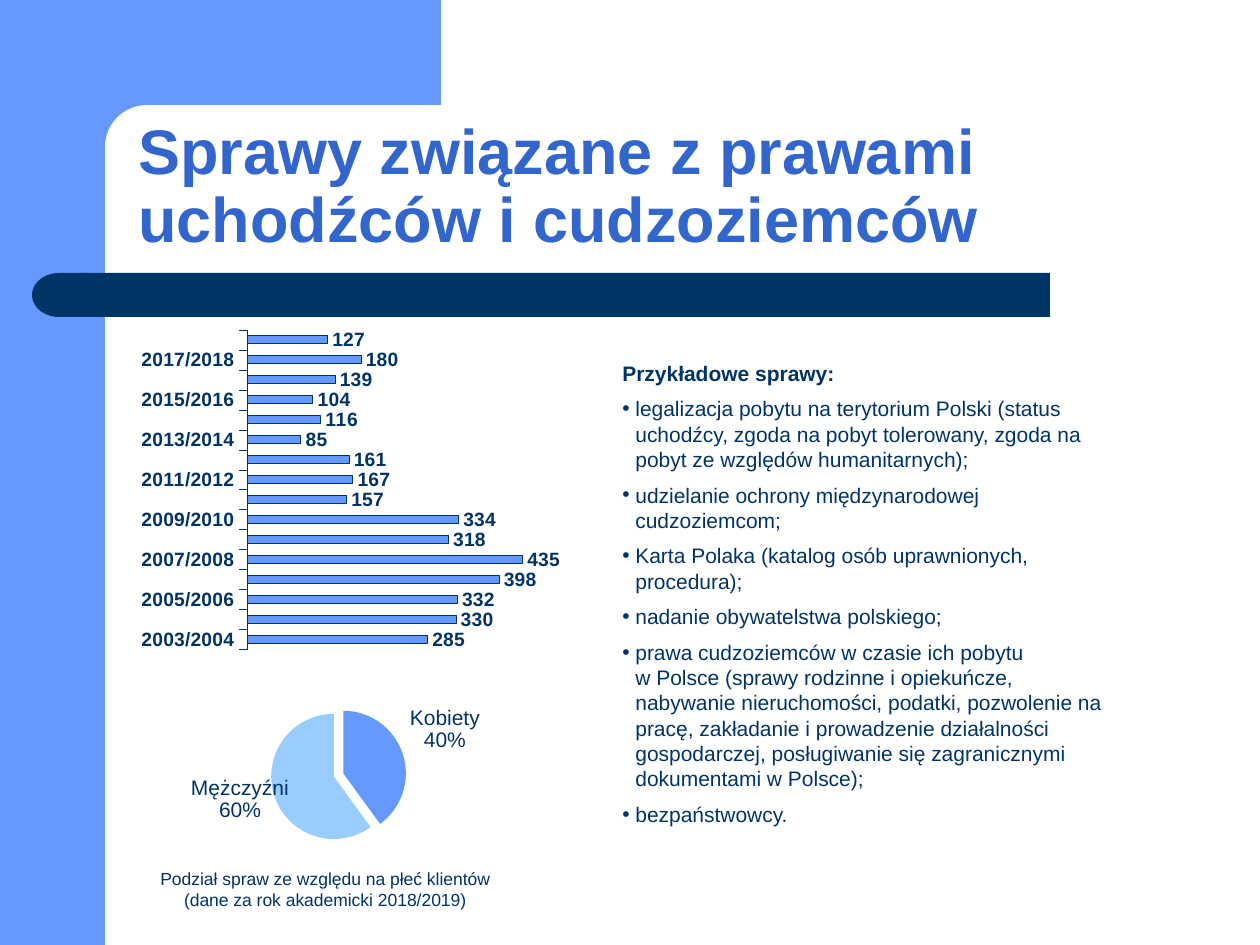
from typing import NamedTuple

from lxml.etree import SubElement as Sub
from pptx import Presentation
from pptx.chart.data import CategoryChartData as ChartData
from pptx.dml.color import RGBColor
from pptx.enum.chart import XL_CHART_TYPE as Kind
from pptx.enum.chart import XL_LABEL_POSITION as Spot
from pptx.enum.chart import XL_TICK_LABEL_POSITION as Tick
from pptx.enum.chart import XL_TICK_MARK as Mark
from pptx.enum.shapes import MSO_SHAPE as Form
from pptx.enum.text import MSO_ANCHOR as Anchor
from pptx.enum.text import PP_ALIGN as Align
from pptx.oxml import parse_xml
from pptx.oxml.ns import nsdecls, qn
from pptx.util import Emu, Pt

BLUE = RGBColor(0x66, 0x99, 0xFF)
PALE = RGBColor(0x99, 0xCC, 0xFF)
NAVY = RGBColor(0x00, 0x33, 0x66)
ROYAL = RGBColor(0x33, 0x66, 0xCC)
WHITE = RGBColor(0xFF, 0xFF, 0xFF)
FACE = "Arial"
SCALE = 914400 / 126


class Box(NamedTuple):
    left: int
    top: int
    width: int
    height: int


class Block(NamedTuple):
    form: Form
    box: Box
    fill: RGBColor
    turn: int = 0
    round: float | None = None


class Para(NamedTuple):
    text: str
    size: int
    color: RGBColor = NAVY
    bold: bool = False
    dot: bool = False
    align: Align = Align.LEFT
    line: float | None = None
    gap: int = 0


class Plot(NamedTuple):
    x: float
    y: float
    w: float
    h: float


BLOCKS = [
    Block(Form.RECTANGLE, Box(0, 0, 105, 945), BLUE),
    Block(Form.RECTANGLE, Box(94, 0, 347, 147), BLUE),
    Block(Form.ROUNDED_RECTANGLE, Box(105, 105, 703, 84), WHITE, round=0.5),
    Block(Form.RECTANGLE, Box(84, 273, 966, 44), NAVY),
    Block(Form.FLOWCHART_DELAY, Box(32, 273, 54, 44), NAVY, turn=180),
]
CASES = [
    "legalizacja pobytu na terytorium Polski (status uchodźcy, zgoda na pobyt "
    "tolerowany, zgoda na pobyt ze względów humanitarnych);",
    "udzielanie ochrony międzynarodowej cudzoziemcom;",
    "Karta Polaka (katalog osób uprawnionych, procedura);",
    "nadanie obywatelstwa polskiego;",
    "prawa cudzoziemców w czasie ich pobytu\nw Polsce (sprawy rodzinne i "
    "opiekuńcze, nabywanie nieruchomości, podatki, pozwolenie na pracę, "
    "zakładanie i prowadzenie działalności gospodarczej, posługiwanie się "
    "zagranicznymi dokumentami w Polsce);",
    "bezpaństwowcy.",
]
COUNTS = [285, 330, 332, 398, 435, 318, 334, 157,
          167, 161, 85, 116, 104, 139, 180, 127]
YEARS = [f"{year}/{year + 1}" for year in range(2003, 2003 + len(COUNTS))]


def px(n: int) -> Emu:
    return Emu(round(n * SCALE))


def place(box: Box) -> list[Emu]:
    return [px(n) for n in box]


def style(font, size: int, color: RGBColor = NAVY, bold: bool = False) -> None:
    font.name, font.size, font.bold = FACE, Pt(size), bold
    font.color.rgb = color


def draw_block(slide, block: Block) -> None:
    shape = slide.shapes.add_shape(block.form, *place(block.box))
    shape.shadow.inherit = False
    shape.fill.solid()
    shape.fill.fore_color.rgb = block.fill
    shape.line.fill.background()
    shape.rotation = block.turn
    if block.round is not None:
        shape.adjustments[0] = block.round


def add_dot(para) -> None:
    props = para._p.get_or_add_pPr()
    props.set("marL", str(px(13)))
    props.set("indent", str(-px(13)))
    Sub(props, qn("a:buFont"), typeface=FACE)
    Sub(props, qn("a:buChar"), char="•")


def draw_text(slide, box: Box, paras: list[Para], anchor: Anchor = Anchor.TOP) -> None:
    frame = slide.shapes.add_textbox(*place(box)).text_frame
    frame.word_wrap = True
    frame.vertical_anchor = anchor
    for i, item in enumerate(paras):
        para = frame.add_paragraph() if i else frame.paragraphs[0]
        para.alignment = item.align
        para.space_before = Pt(item.gap)
        if item.line:
            para.line_spacing = item.line
        if item.dot:
            add_dot(para)
        for j, part in enumerate(item.text.split("\n")):
            if j:
                para.add_line_break()
            run = para.add_run()
            run.text = part
            style(run.font, item.size, item.color, item.bold)


def draw_chart(slide, kind: Kind, box: Box, names: list[str], vals: list[int], plot: Plot):
    data = ChartData()
    data.categories = names
    data.add_series("Series 1", vals)
    chart = slide.shapes.add_chart(kind, *place(box), data).chart
    chart.has_title = chart.has_legend = False
    style(chart.font, 12)
    area = chart._chartSpace.chart.plotArea
    for old in area.findall(qn("c:layout")):
        area.remove(old)
    lay = Sub(area, qn("c:layout"))
    area.insert(0, lay)
    spot = Sub(lay, qn("c:manualLayout"))
    Sub(spot, qn("c:layoutTarget"), val="inner")
    for key in ("xMode", "yMode"):
        Sub(spot, qn(f"c:{key}"), val="edge")
    for key, val in plot._asdict().items():
        Sub(spot, qn(f"c:{key}"), val=str(val))
    return chart


def draw_bars(slide) -> None:
    chart = draw_chart(slide, Kind.BAR_CLUSTERED, Box(94, 300, 546, 372),
                       YEARS, COUNTS, Plot(0.28, 0.08, 0.58, 0.86))
    axis = chart.value_axis
    axis.minimum_scale, axis.maximum_scale = 0, 500
    axis.has_major_gridlines = axis.visible = False
    axis = chart.category_axis
    axis.major_tick_mark, axis.minor_tick_mark = Mark.OUTSIDE, Mark.NONE
    axis.tick_label_position = Tick.LOW
    axis.format.line.color.rgb = NAVY
    axis.format.line.width = Pt(0.15)
    style(axis.tick_labels.font, 11, bold=True)
    bars = chart.plots[0]
    bars.gap_width, bars.vary_by_categories = 150, False
    row = bars.series[0]
    row.format.fill.solid()
    row.format.fill.fore_color.rgb = BLUE
    row.format.line.color.rgb = NAVY
    row.format.line.width = Pt(0.25)
    tags = row.data_labels
    tags.show_value, tags.position = True, Spot.OUTSIDE_END
    style(tags.font, 11, bold=True)


def draw_pie(slide) -> None:
    chart = draw_chart(slide, Kind.PIE, Box(52, 672, 546, 208),
                       ["Kobiety", "Mężczyźni"], [40, 60], Plot(0.4, 0.17, 0.25, 0.65))
    pie = chart.plots[0]
    pie.vary_by_categories = True
    row = pie.series[0]
    row._element.find(qn("c:tx")).addnext(
        parse_xml(f'<c:explosion {nsdecls("c")} val="8"/>'))
    for i, color in enumerate((BLUE, PALE)):
        fill = row.points[i].format.fill
        fill.solid()
        fill.fore_color.rgb = color
    tags = row.data_labels
    tags.show_value = False
    tags.show_category_name = tags.show_percentage = True
    tags.number_format, tags.number_format_is_linked = "0%", False
    tags.position = Spot.OUTSIDE_END
    style(tags.font, 12)
    root = tags._element
    split = parse_xml(f'<c:separator {nsdecls("c")}>\n</c:separator>')
    root.find(qn("c:showBubbleSize")).addnext(split)
    shift = parse_xml(
        f'<c:dLbl {nsdecls("c")}><c:idx val="1"/><c:layout><c:manualLayout>'
        '<c:x val="0.04"/><c:y val="-0.1"/></c:manualLayout></c:layout>'
        '<c:dLblPos val="outEnd"/><c:showLegendKey val="0"/><c:showVal val="0"/>'
        '<c:showCatName val="1"/><c:showSerName val="0"/><c:showPercent val="1"/>'
        '<c:showBubbleSize val="0"/><c:separator>\n</c:separator></c:dLbl>')
    root.insert(0, shift)


def main() -> None:
    deck = Presentation()
    deck.slide_width, deck.slide_height = px(1260), px(945)
    slide = deck.slides.add_slide(deck.slide_layouts[6])
    for block in BLOCKS:
        draw_block(slide, block)
    title = Para("Sprawy związane z prawami uchodźców i cudzoziemców", 36, ROYAL, True, line=0.9)
    draw_text(slide, Box(126, 105, 1102, 157), [title], Anchor.BOTTOM)
    head = Para("Przykładowe sprawy:", 12, bold=True)
    draw_text(slide, Box(610, 354, 507, 496),
              [head] + [Para(text, 12, dot=True, gap=6) for text in CASES])
    draw_bars(slide)
    draw_pie(slide)
    note = Para("Podział spraw ze względu na płeć klientów (dane za rok akademicki 2018/2019)",
                10, align=Align.CENTER)
    draw_text(slide, Box(134, 862, 382, 54), [note])
    deck.save("out.pptx")


if __name__ == "__main__":
    main()
